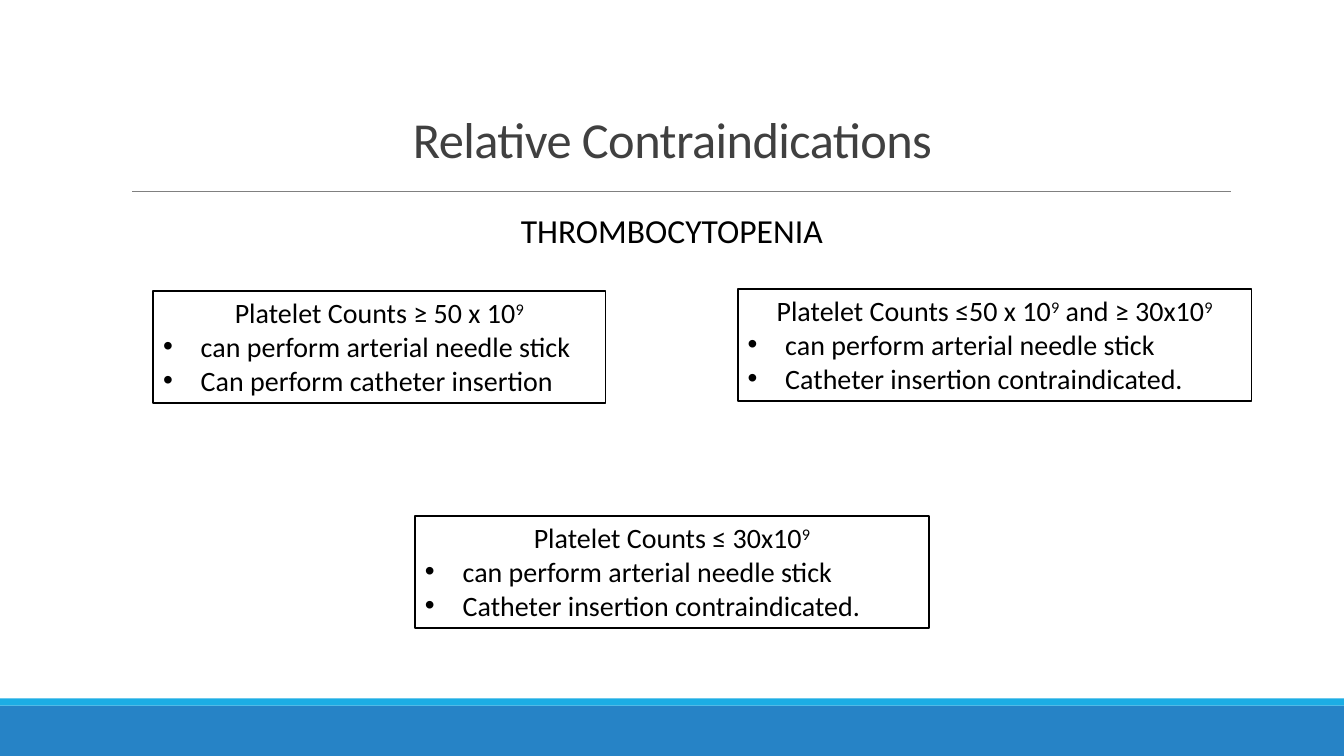
from lxml.etree import SubElement
from pptx import Presentation
from pptx.dml.color import RGBColor
from pptx.enum.shapes import MSO_CONNECTOR, MSO_SHAPE
from pptx.enum.text import MSO_ANCHOR, MSO_AUTO_SIZE, PP_ALIGN
from pptx.oxml.ns import qn
from pptx.util import Cm, Pt

BLUE = RGBColor(0x26, 0x83, 0xC6)
CYAN = RGBColor(0x1C, 0xAD, 0xE4)
GRAY = RGBColor(0x80, 0x80, 0x80)
TITLE_GRAY = RGBColor(0x40, 0x40, 0x40)
BLACK = RGBColor(0, 0, 0)
WHITE = RGBColor(0xFF, 0xFF, 0xFF)
FONT = "Calibri"

presentation = Presentation()
presentation.slide_width = Cm(33.87)
presentation.slide_height = Cm(19.05)
slide = presentation.slides.add_slide(presentation.slide_layouts[6])


def add_rectangle(left, top, width, height, fill):
    shape = slide.shapes.add_shape(
        MSO_SHAPE.RECTANGLE, Cm(left), Cm(top), Cm(width), Cm(height))
    shape.shadow.inherit = False
    shape.fill.solid()
    shape.fill.fore_color.rgb = fill
    shape.line.fill.background()
    return shape


def set_font(paragraph, size, color):
    paragraph.font.name = FONT
    paragraph.font.size = Pt(size)
    paragraph.font.color.rgb = color


# Footer bands
add_rectangle(0, 17.78, 33.87, 1.27, BLUE)
add_rectangle(0, 17.6, 33.87, 0.18, CYAN)

# Rule below the title
rule = slide.shapes.add_connector(
    MSO_CONNECTOR.STRAIGHT, Cm(3.33), Cm(4.82), Cm(31.01), Cm(4.82))
rule.line.color.rgb = GRAY
rule.line.width = Pt(0.5)
SubElement(rule._element.spPr, qn("a:effectLst"))

# Title and subtitle
headings = [
    ("Relative Contraindications", 2.34, 0.71, 29.21, 3.68, 36, TITLE_GRAY,
     MSO_ANCHOR.BOTTOM, 0.85, -40),
    ("THROMBOCYTOPENIA", 11.76, 5.16, 10.34, 1.28, 24, BLACK,
     MSO_ANCHOR.TOP, 1.0, 0),
]
for (text, left, top, width, height, size, color,
     anchor, line_spacing, letter_spacing) in headings:
    text_box = slide.shapes.add_textbox(Cm(left), Cm(top), Cm(width), Cm(height))
    text_box.text_frame.word_wrap = True
    text_box.text_frame.vertical_anchor = anchor
    paragraph = text_box.text_frame.paragraphs[0]
    paragraph.alignment = PP_ALIGN.CENTER
    paragraph.line_spacing = line_spacing
    set_font(paragraph, size, color)
    run = paragraph.add_run()
    run.text = text
    run.font._element.set("spc", str(letter_spacing))

# Platelet count boxes: each ^ starts or ends a superscript
NEEDLE_STICK = "can perform arterial needle stick"
NO_CATHETER = "Catheter insertion contraindicated."
count_boxes = [
    (3.86, 7.33, 11.4, "Platelet Counts ≥ 50 x 10^9",
     [NEEDLE_STICK, "Can perform catheter insertion"]),
    (18.59, 7.28, 12.95, "Platelet Counts ≤50 x 10^9^ and ≥ 30x10^9",
     [NEEDLE_STICK, NO_CATHETER]),
    (10.46, 13, 12.95, "Platelet Counts ≤ 30x10^9",
     [NEEDLE_STICK, NO_CATHETER]),
]
for left, top, width, heading, advice in count_boxes:
    box = add_rectangle(left, top, width, 2.82, WHITE)
    box.line.color.rgb = BLACK
    box.line.width = Pt(1.25)
    text_frame = box.text_frame
    text_frame.word_wrap = True
    text_frame.auto_size = MSO_AUTO_SIZE.SHAPE_TO_FIT_TEXT
    text_frame.vertical_anchor = MSO_ANCHOR.TOP

    paragraph = text_frame.paragraphs[0]
    paragraph.alignment = PP_ALIGN.CENTER
    set_font(paragraph, 20, BLACK)
    for index, part in enumerate(heading.split("^")):
        run = paragraph.add_run()
        run.text = part
        if index % 2:
            run.font._element.set("baseline", "30000")

    for line in advice:
        paragraph = text_frame.add_paragraph()
        paragraph.text = line
        paragraph.alignment = PP_ALIGN.LEFT
        set_font(paragraph, 20, BLACK)
        properties = paragraph._p.get_or_add_pPr()
        properties.set("marL", str(Cm(0.95)))
        properties.set("indent", str(-Cm(0.95)))
        bullet_font = properties.makeelement(qn("a:buFont"), {"typeface": "Arial"})
        bullet = properties.makeelement(qn("a:buChar"), {"char": "•"})
        properties.insert(0, bullet_font)
        properties.insert(1, bullet)

presentation.save("out.pptx")
